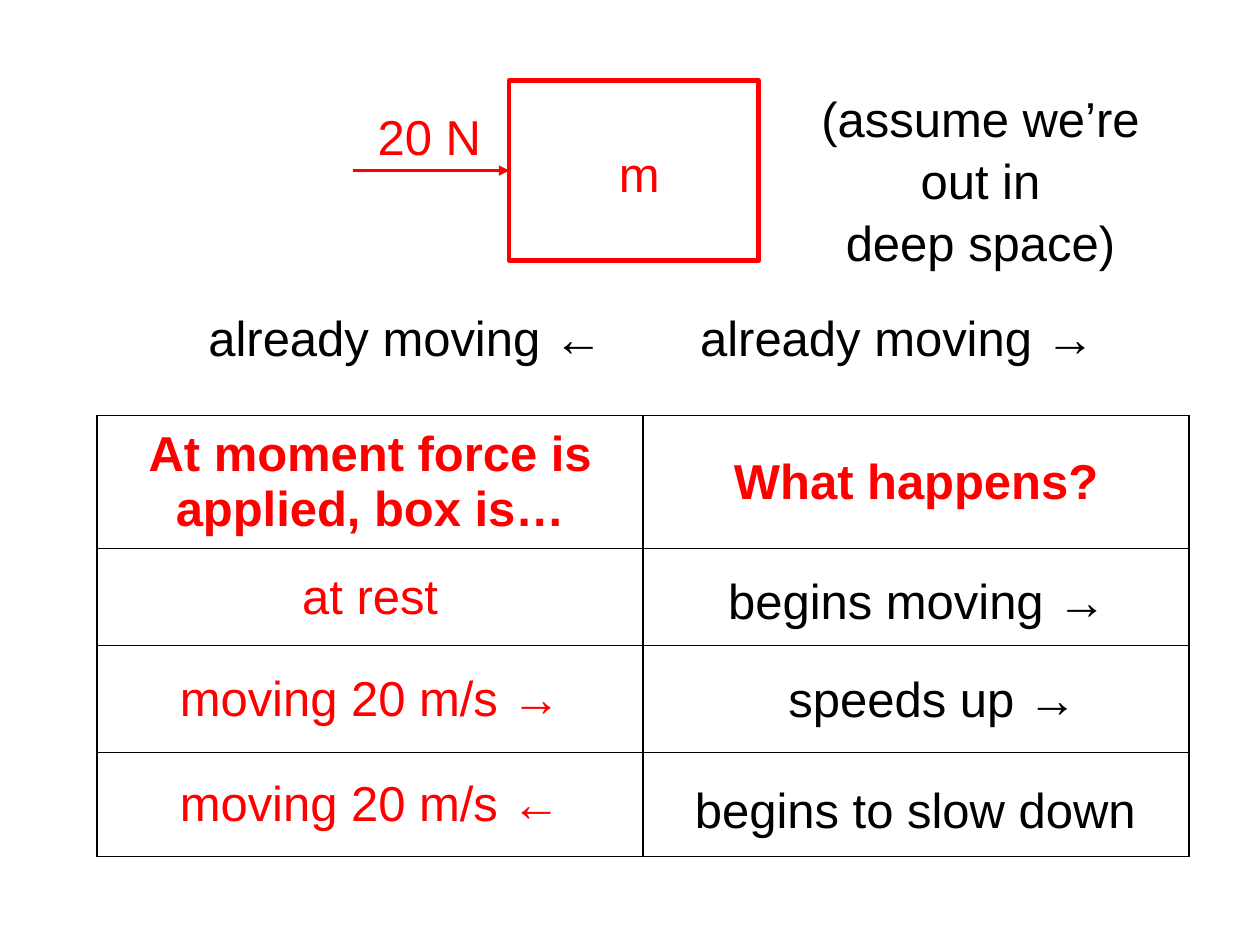
"""Build the slide on a 20 N force applied to a box in deep space."""
from pptx import Presentation
from pptx.dml.color import RGBColor
from pptx.enum.shapes import MSO_CONNECTOR as LINE, MSO_SHAPE as SHAPE
from pptx.enum.text import MSO_ANCHOR as ANCHOR, MSO_AUTO_SIZE as FIT, PP_ALIGN as ALIGN
from pptx.oxml import parse_xml
from pptx.oxml.ns import nsdecls
from pptx.oxml.xmlchemy import OxmlElement
from pptx.util import Pt

RED = RGBColor(0xFF, 0x00, 0x00)
BLACK = RGBColor(0x00, 0x00, 0x00)


class Board:
    def __init__(self, slide, font="Arial", size=28):
        self.shapes = slide.shapes
        self.font, self.size = font, size

    def style(self, paragraph, color, align, bold=False):
        paragraph.alignment = align
        font = paragraph.font
        font.name, font.size, font.bold = self.font, Pt(self.size), bold
        font.color.rgb = color

    def text(self, lines, left, top, width, height, color=BLACK,
             align=ALIGN.LEFT, wrap=False):
        frame = self.shapes.add_textbox(Pt(left), Pt(top), Pt(width), Pt(height)).text_frame
        frame.word_wrap = wrap
        frame.auto_size = FIT.NONE if wrap else FIT.SHAPE_TO_FIT_TEXT
        frame.text = lines
        for paragraph in frame.paragraphs:
            self.style(paragraph, color, align)
            paragraph.line_spacing = 1.05

    def box(self, left, top, width, height):
        box = self.shapes.add_shape(SHAPE.RECTANGLE, Pt(left), Pt(top), Pt(width), Pt(height))
        box.shadow.inherit = False
        box.fill.background()
        box.line.color.rgb = RED
        box.line.width = Pt(2.5)
        return box

    def arrow_to(self, target, start, y):
        arrow = self.shapes.add_connector(LINE.STRAIGHT, Pt(start), Pt(y), target.left, Pt(y))
        arrow.end_connect(target, 1)
        arrow.line.color.rgb = RED
        arrow.line.width = Pt(1.75)
        head = OxmlElement("a:tailEnd")
        head.set("type", "triangle")
        arrow.line._get_or_add_ln().append(head)
        arrow._element.spPr.append(OxmlElement("a:effectLst"))

    def border(self, cell):
        properties = cell._tc.get_or_add_tcPr()
        for position, side in enumerate("LRTB"):
            properties.insert(position, parse_xml(
                f'<a:ln{side} {nsdecls("a")} w="{Pt(1)}"><a:solidFill>'
                f'<a:srgbClr val="{BLACK}"/></a:solidFill></a:ln{side}>'))

    def table(self, rows, left, top, widths, heights):
        table = self.shapes.add_table(len(heights), len(widths), Pt(left), Pt(top),
                                      Pt(sum(widths)), Pt(sum(heights))).table
        table.horz_banding = False
        for column, width in zip(table.columns, widths):
            column.width = Pt(width)
        for row, height in zip(table.rows, heights):
            row.height = Pt(height)
        for r, row in enumerate(rows):
            for c, words in enumerate(row):
                cell = table.cell(r, c)
                cell.fill.background()
                cell.vertical_anchor = ANCHOR.MIDDLE
                self.border(cell)
                cell.text = words
                self.style(cell.text_frame.paragraphs[0], RED, ALIGN.CENTER, bold=r == 0)


def main():
    deck = Presentation()
    deck.slide_width, deck.slide_height = Pt(720), Pt(540)
    board = Board(deck.slides.add_slide(deck.slide_layouts[6]))

    mass = board.box(291, 46, 142.5, 103)
    board.arrow_to(mass, 201.5, 97.5)
    for label, left, top in (("m", 296.5, 76.5), ("20 N", 176.5, 55.5)):
        board.text(label, left, top, 137.5, 68.5, RED, ALIGN.CENTER, wrap=True)

    board.table([("At moment force is applied, box is…", "What happens?"),
                 ("at rest", ""),
                 ("moving 20 m/s →", ""),
                 ("moving 20 m/s ←", "")],
                55.5, 237.5, (312, 312), (76, 55.5, 61, 59.5))

    for outcome, left, top, width in (("begins moving →", 409, 321, 230.5),
                                      ("speeds up →", 443.5, 377, 179.5),
                                      ("begins to slow down", 390, 440, 267)):
        board.text(outcome, left, top, width, 41)

    board.text("(assume we’re\nout in\ndeep space)", 461, 45.5, 198.5, 108.5,
               align=ALIGN.CENTER)
    for motion, left in (("already moving →", 393), ("already moving ←", 112)):
        board.text(motion, left, 170.5, 242, 41)

    deck.save("out.pptx")


if __name__ == "__main__":
    main()
